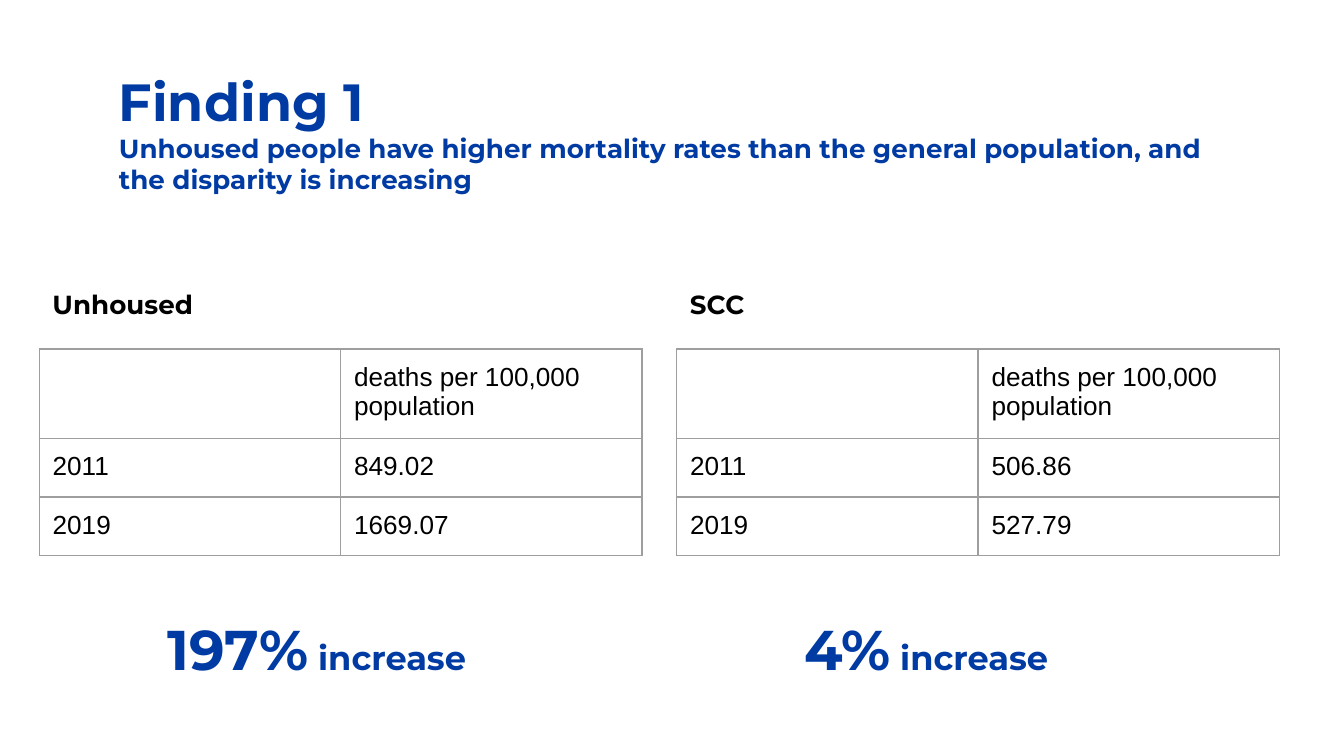
from lxml import etree
from pptx import Presentation
from pptx.dml.color import RGBColor
from pptx.enum import text
from pptx.oxml import ns
from pptx.util import Pt

title = [("Finding 1", "head"),
         ("Unhoused people have higher mortality rates than the general "
          "population, and the disparity is increasing", "small")]
unit = "deaths per 100,000 population"
groups = [
    ("Unhoused", [("", unit), ("2011", "849.02"), ("2019", "1669.07")], "197%"),
    ("SCC", [("", unit), ("2011", "506.86"), ("2019", "527.79")], "4%"),
]

theme = {
    "blue": "003BA3", "black": "000000", "rule": "9E9E9E",
    "bold": "Montserrat", "plain": "Arial",
    "head": 28, "small": 14, "big": 30, "mid": 18,
}
left, step = 21, 341.5
col = 161.5
rows = [48, 31.25, 31.25]
pad = 7.2


def style(font, size, color="blue", face="bold"):
    font.name = theme[face]
    font.size = Pt(theme[size])
    font.bold = face == "bold"
    font.color.rgb = RGBColor.from_string(theme[color])


def inset(obj):
    obj.margin_left = obj.margin_right = Pt(pad)
    obj.margin_top = obj.margin_bottom = Pt(pad)


def frame(shape):
    body = shape.text_frame
    body.word_wrap = True
    body.auto_size = text.MSO_AUTO_SIZE.NONE
    body.vertical_anchor = text.MSO_ANCHOR.TOP
    inset(body)
    return body


def box(x, y, w, h):
    shape = slide.shapes.add_textbox(Pt(x), Pt(y), Pt(w), Pt(h))
    return frame(shape).paragraphs[0]


def border(cell):
    props = cell._tc.get_or_add_tcPr()
    for side in ("L", "R", "T", "B"):
        line = etree.SubElement(props, ns.qn("a:ln" + side), w=str(Pt(0.75)))
        fill = etree.SubElement(line, ns.qn("a:solidFill"))
        etree.SubElement(fill, ns.qn("a:srgbClr"), val=theme["rule"])


def grid(x, y, data):
    table = slide.shapes.add_table(len(data), 2, Pt(x), Pt(y),
                                   Pt(2 * col), Pt(sum(rows))).table
    table.first_row = table.horz_banding = False
    for c in table.columns:
        c.width = Pt(col)
    for r, line in enumerate(data):
        table.rows[r].height = Pt(rows[r])
        for c, word in enumerate(line):
            cell = table.cell(r, c)
            inset(cell)
            border(cell)
            cell.fill.background()
            cell.text = word
            style(cell.text_frame.paragraphs[0].font, "small", "black", "plain")


deck = Presentation()
deck.slide_width, deck.slide_height = Pt(720), Pt(405)
slide = deck.slides.add_slide(deck.slide_layouts[5])

head = slide.shapes.title
head.left, head.top, head.width, head.height = Pt(56.5), Pt(30), Pt(607), Pt(99)
body = frame(head)
body.text = "\n".join(word for word, size in title)
for par, (word, size) in zip(body.paragraphs, title):
    par.alignment = text.PP_ALIGN.LEFT
    style(par.font, size)

for i, (name, data, rise) in enumerate(groups):
    x = left + i * step
    label = box(x, 147.5, 153.5, 31.5)
    label.text = name
    style(label.font, "small", "black")
    grid(x, 187, data)
    note = box(x + 61.5, 322, 199.5, 51)
    for word, size in ((rise, "big"), (" increase", "mid")):
        run = note.add_run()
        run.text = word
        style(run.font, size)

deck.save("out.pptx")
